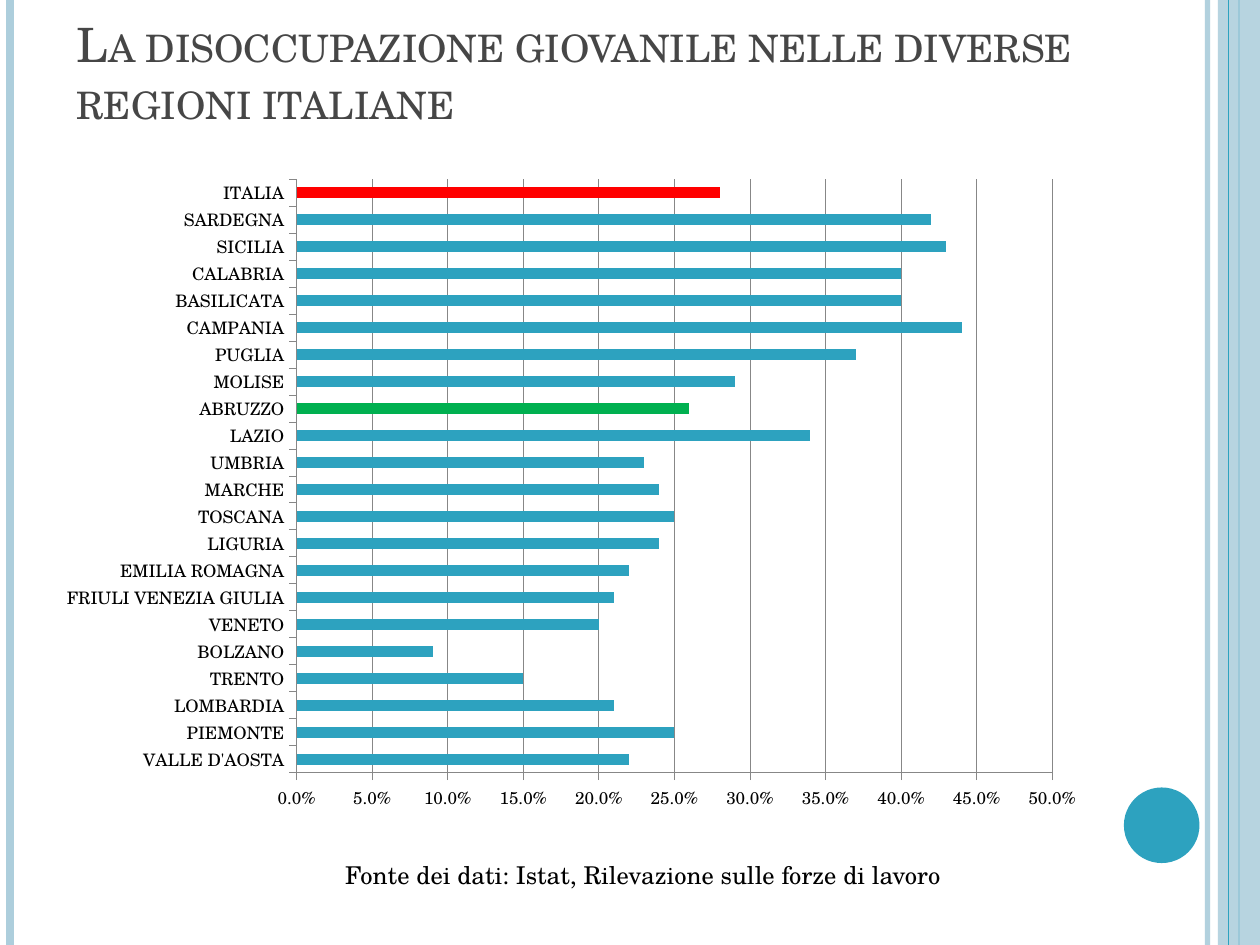
from collections import namedtuple
from dataclasses import dataclass

from lxml import etree
from pptx import Presentation
from pptx.chart import data
from pptx.dml import color
from pptx.enum import chart as kinds, shapes, text
from pptx.oxml import ns
from pptx.util import Emu, Inches, Pt

COLS, ROWS = 100, 75
Box = namedtuple("Box", "x y w h")


@dataclass(frozen=True)
class Theme:
    face: str = "TeX Gyre Schola"
    teal: str = "2DA2BF"
    pale: str = "ADCEDC"
    red: str = "FF0000"
    green: str = "00B050"
    grey: str = "464646"
    rule: str = "878787"
    black: str = "000000"
    title: float = 27
    note: float = 14
    label: float = 9.8


T = Theme()
RATES = {
    "VALLE D'AOSTA": 0.22, "PIEMONTE": 0.25, "LOMBARDIA": 0.21,
    "TRENTO": 0.15, "BOLZANO": 0.09, "VENETO": 0.2,
    "FRIULI VENEZIA GIULIA": 0.21, "EMILIA ROMAGNA": 0.22,
    "LIGURIA": 0.24, "TOSCANA": 0.25, "MARCHE": 0.24,
    "UMBRIA": 0.23, "LAZIO": 0.34, "ABRUZZO": 0.26,
    "MOLISE": 0.29, "PUGLIA": 0.37, "CAMPANIA": 0.44,
    "BASILICATA": 0.4, "CALABRIA": 0.4, "SICILIA": 0.43,
    "SARDEGNA": 0.42, "ITALIA": 0.28,
}
MARKS = {"ABRUZZO": T.green, "ITALIA": T.red}


def rgb(code):
    return color.RGBColor.from_string(code)


def assign(item, values):
    for name, value in values.items():
        setattr(item, name, value)


def node(parent, tag, **values):
    return etree.SubElement(parent, ns.qn(tag), values)


def fade(fill, share):
    tint = next(fill.iter(ns.qn("a:srgbClr")))
    node(tint, "a:alpha", val=str(share * 1000))


def paint(form, tone):
    form.shadow.inherit = False
    form.fill.solid()
    form.fill.fore_color.rgb = rgb(tone)
    form.line.fill.background()


def stripe(slide, box, col, tone, width, share=100):
    x = box.x + int(box.w * col / COLS)
    line = slide.shapes.add_connector(
        shapes.MSO_CONNECTOR.STRAIGHT, x, box.y, x, box.y + box.h)
    line.line.width = Pt(width)
    line.line.color.rgb = rgb(tone)
    props = line._element.spPr
    if share < 100:
        fade(props, share)
    node(props, "a:effectLst")


def frame(slide, box):
    stripe(slide, box, 95.83, T.pale, 3, 93)
    stripe(slide, box, 0.83, T.pale, 4.5)
    stripe(slide, box, 98.33, T.teal, 1.5)
    band = slide.shapes.add_shape(
        shapes.MSO_SHAPE.RECTANGLE, *part(box, 96.67, 0, 3.33, ROWS))
    paint(band, T.pale)
    fade(band._element.spPr, 87)
    stripe(slide, box, 97.5, T.teal, 0.75)
    disc = slide.shapes.add_shape(
        shapes.MSO_SHAPE.OVAL, *part(box, 89.2, 62.5, 6, 6))
    paint(disc, T.teal)


def part(box, col, row, wide, high):
    return Box(box.x + int(box.w * col / COLS), box.y + int(box.h * row / ROWS),
               int(box.w * wide / COLS), int(box.h * high / ROWS))


def words(slide, box, copy, size, tone, anchor, wrap):
    body = slide.shapes.add_textbox(*box).text_frame
    assign(body, {"word_wrap": wrap, "vertical_anchor": anchor})
    run = body.paragraphs[0].add_run()
    run.text = copy
    assign(run.font, {"name": T.face, "size": Pt(size)})
    run.font.color.rgb = rgb(tone)
    return run


def title(slide, box):
    run = words(slide, box,
                "La disoccupazione giovanile nelle diverse regioni italiane",
                T.title, T.grey, text.MSO_ANCHOR.BOTTOM, True)
    run.font._element.set("cap", "small")


def source(slide, box):
    words(slide, box, "Fonte dei dati: Istat, Rilevazione sulle forze di lavoro",
          T.note, T.black, text.MSO_ANCHOR.TOP, False)


def layout(chart, shares):
    area = chart._chartSpace.chart.plotArea
    for old in area.findall(ns.qn("c:layout")):
        area.remove(old)
    outer = etree.Element(ns.qn("c:layout"))
    area.insert(0, outer)
    inner = node(outer, "c:manualLayout")
    node(inner, "c:layoutTarget", val="inner")
    for name in ("xMode", "yMode"):
        node(inner, "c:" + name, val="edge")
    for name, share in shares.items():
        node(inner, "c:" + name, val=str(share / 100))


def bars(slide, box):
    facts = data.CategoryChartData(number_format="0.0%")
    facts.categories = list(RATES)
    facts.add_series("Series 1", list(RATES.values()))
    chart = slide.shapes.add_chart(
        kinds.XL_CHART_TYPE.BAR_CLUSTERED, *box, facts).chart
    assign(chart, {"has_legend": False, "has_title": False})
    assign(chart.font, {"name": T.face, "size": Pt(T.label)})
    chart.font.color.rgb = rgb(T.black)
    plot = chart.plots[0]
    assign(plot, {"gap_width": 150, "vary_by_categories": False})
    row = plot.series[0]
    row.format.fill.solid()
    row.format.fill.fore_color.rgb = rgb(T.teal)
    for name, tone in MARKS.items():
        fill = row.points[list(RATES).index(name)].format.fill
        fill.solid()
        fill.fore_color.rgb = rgb(tone)
    rate = chart.value_axis
    assign(rate, {"minimum_scale": 0, "maximum_scale": 0.5, "major_unit": 0.05,
                  "has_major_gridlines": True})
    assign(rate.tick_labels, {"number_format": "0.0%",
                              "number_format_is_linked": False})
    for axis in (rate, chart.category_axis):
        assign(axis, {"major_tick_mark": kinds.XL_TICK_MARK.OUTSIDE,
                      "minor_tick_mark": kinds.XL_TICK_MARK.NONE})
    for item in (rate, chart.category_axis, rate.major_gridlines):
        item.format.line.width = Pt(0.5)
        item.format.line.color.rgb = rgb(T.rule)
    layout(chart, {"x": 23, "y": 3.7, "w": 74.8, "h": 90.6})


def main():
    deck = Presentation()
    assign(deck, {"slide_width": Inches(10), "slide_height": Inches(7.5)})
    slide = deck.slides.add_slide(deck.slide_layouts[6])
    page = Box(Emu(0), Emu(0), deck.slide_width, deck.slide_height)
    frame(slide, page)
    title(slide, part(page, 5.1, 1.3, 89.8, 9.4))
    source(slide, part(page, 26.4, 67.8, 49.8, 3.4))
    bars(slide, part(page, 5.1, 12.3, 80.3, 52))
    deck.save("out.pptx")


if __name__ == "__main__":
    main()
